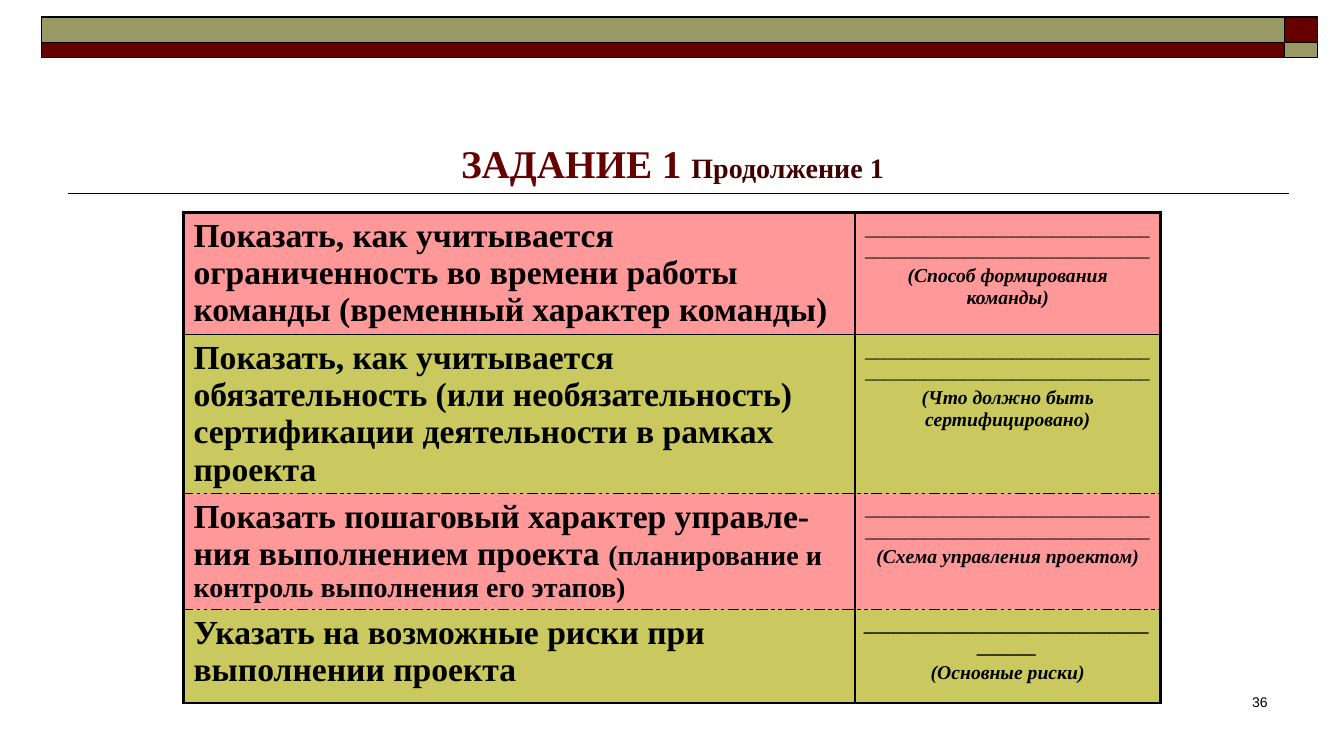
from dataclasses import dataclass

from lxml.etree import SubElement
from pptx import Presentation
from pptx.dml.color import RGBColor
from pptx.enum.shapes import MSO_CONNECTOR, MSO_SHAPE
from pptx.enum.text import MSO_ANCHOR, PP_ALIGN
from pptx.oxml import parse_xml
from pptx.oxml.ns import nsdecls, qn
from pptx.util import Inches, Pt

SERIF = "Times New Roman"
BLACK, MAROON, DARK_MAROON, OLIVE = "000000", "660000", "420000", "999966"
PINK, LIME = "FF9999", "C9C960"
THIN, THICK = 1, 2.25


@dataclass
class Band:
    left: float
    top: float
    width: float
    height: float
    color: str


@dataclass
class Task:
    height: float
    wording: str
    answer: str
    detail: str = ""
    blank: str = "_" * 58
    blank_bold: bool = False


BANDS = [
    Band(12.74, 0.17, 0.33, 0.25, MAROON),
    Band(0.41, 0.17, 12.33, 0.25, OLIVE),
    Band(0.41, 0.42, 12.33, 0.15, MAROON),
    Band(12.74, 0.42, 0.33, 0.15, OLIVE),
]
TASKS = [
    Task(1.21, "Показать, как учитывается ограниченность во времени работы команды "
         "(временный характер команды)", "(Способ формирования команды)"),
    Task(1.57, "Показать, как учитывается обязательность (или необязательность) "
         "сертификации деятельности в рамках проекта",
         "(Что должно быть сертифицировано)"),
    Task(1.15, "Показать пошаговый характер управле-ния выполнением проекта ",
         "(Схема управления проектом)",
         detail="(планирование и контроль выполнения его этапов)"),
    Task(0.93, "Указать на возможные риски при выполнении проекта",
         "(Основные риски)", blank="_" * 35, blank_bold=True),
]
COLUMN_WIDTHS = [6.66, 3.03]


def rgb(color: str) -> RGBColor:
    return RGBColor.from_string(color)


def add_text(paragraph, text: str, *, size: float, font: str = SERIF,
             color: str = BLACK, bold: bool = True, italic: bool = False,
             align=PP_ALIGN.LEFT) -> None:
    paragraph.alignment = align
    run = paragraph.add_run()
    run.text = text
    run.font.name = font
    run.font.size = Pt(size)
    run.font.bold = bold
    run.font.italic = italic
    run.font.color.rgb = rgb(color)


def add_band(slide, band: Band) -> None:
    shape = slide.shapes.add_shape(
        MSO_SHAPE.RECTANGLE, Inches(band.left), Inches(band.top),
        Inches(band.width), Inches(band.height))
    shape.shadow.inherit = False
    shape.fill.solid()
    shape.fill.fore_color.rgb = rgb(band.color)
    shape.line.color.rgb = rgb(BLACK)
    shape.line.width = Pt(THIN)


def add_rule(slide, start: float, end: float, top: float) -> None:
    rule = slide.shapes.add_connector(
        MSO_CONNECTOR.STRAIGHT, Inches(start), Inches(top), Inches(end), Inches(top))
    rule.line.color.rgb = rgb(BLACK)
    rule.line.width = Pt(THIN)
    SubElement(rule.element.spPr, qn("a:effectLst"))


def set_borders(cell, row: int, column: int) -> None:
    last_row = len(TASKS) - 1
    edges = {
        "L": (column == 0, False),
        "R": (column == 1, False),
        "T": (row == 0, row >= 2),
        "B": (row == last_row, 1 <= row < last_row),
    }
    properties = cell._tc.get_or_add_tcPr()
    for position, (side, (outer, dashed)) in enumerate(edges.items()):
        width = Pt(THICK if outer else THIN)
        dash = "sysDashDotDot" if dashed else "solid"
        properties.insert(position, parse_xml(
            f'<a:ln{side} {nsdecls("a")} w="{width}"><a:solidFill>'
            f'<a:srgbClr val="{BLACK}"/></a:solidFill>'
            f'<a:prstDash val="{dash}"/></a:ln{side}>'))


def add_tasks(slide) -> None:
    table = slide.shapes.add_table(
        len(TASKS), 2, Inches(1.82), Inches(2.11), Inches(sum(COLUMN_WIDTHS)),
        Inches(sum(task.height for task in TASKS))).table
    table.first_row = table.horz_banding = False
    for column, width in zip(table.columns, COLUMN_WIDTHS):
        column.width = Inches(width)
    for row, task in enumerate(TASKS):
        table.rows[row].height = Inches(task.height)
        for column in range(2):
            cell = table.cell(row, column)
            cell.fill.solid()
            cell.fill.fore_color.rgb = rgb(LIME if row % 2 else PINK)
            set_borders(cell, row, column)

        wording = table.cell(row, 0).text_frame.paragraphs[0]
        add_text(wording, task.wording, size=24)
        if task.detail:
            add_text(wording, task.detail, size=20)

        answer_frame = table.cell(row, 1).text_frame
        add_text(answer_frame.paragraphs[0], task.blank, size=14,
                 bold=task.blank_bold, italic=task.blank_bold,
                 align=PP_ALIGN.CENTER if task.blank_bold else PP_ALIGN.LEFT)
        answer = answer_frame.add_paragraph()
        answer.space_before = Pt(2.8)
        add_text(answer, task.answer, size=14, italic=True, align=PP_ALIGN.CENTER)


def main() -> None:
    presentation = Presentation()
    presentation.slide_width = Inches(13.33)
    presentation.slide_height = Inches(7.5)
    slide = presentation.slides.add_slide(presentation.slide_layouts[5])

    # Header bands and the rule under the title
    add_rule(slide, 12.78, 0.67, 1.92)
    for band in BANDS:
        add_band(slide, band)

    # Title
    title = slide.shapes.title
    title.left, title.top = Inches(1.67), Inches(1.33)
    title.width, title.height = Inches(10), Inches(0.57)
    title.text_frame.vertical_anchor = MSO_ANCHOR.BOTTOM
    heading = title.text_frame.paragraphs[0]
    add_text(heading, "ЗАДАНИЕ 1 ", size=28, color=MAROON, align=PP_ALIGN.CENTER)
    add_text(heading, "Продолжение 1", size=20, color=DARK_MAROON,
             align=PP_ALIGN.CENTER)

    # Task table
    add_tasks(slide)

    # Page number
    page = slide.shapes.add_textbox(
        Inches(9.89), Inches(6.83), Inches(2.78), Inches(0.5)).text_frame
    page.word_wrap = True
    add_text(page.paragraphs[0], "36", size=10, font="Arial", bold=False,
             align=PP_ALIGN.RIGHT)

    presentation.save("out.pptx")


if __name__ == "__main__":
    main()
